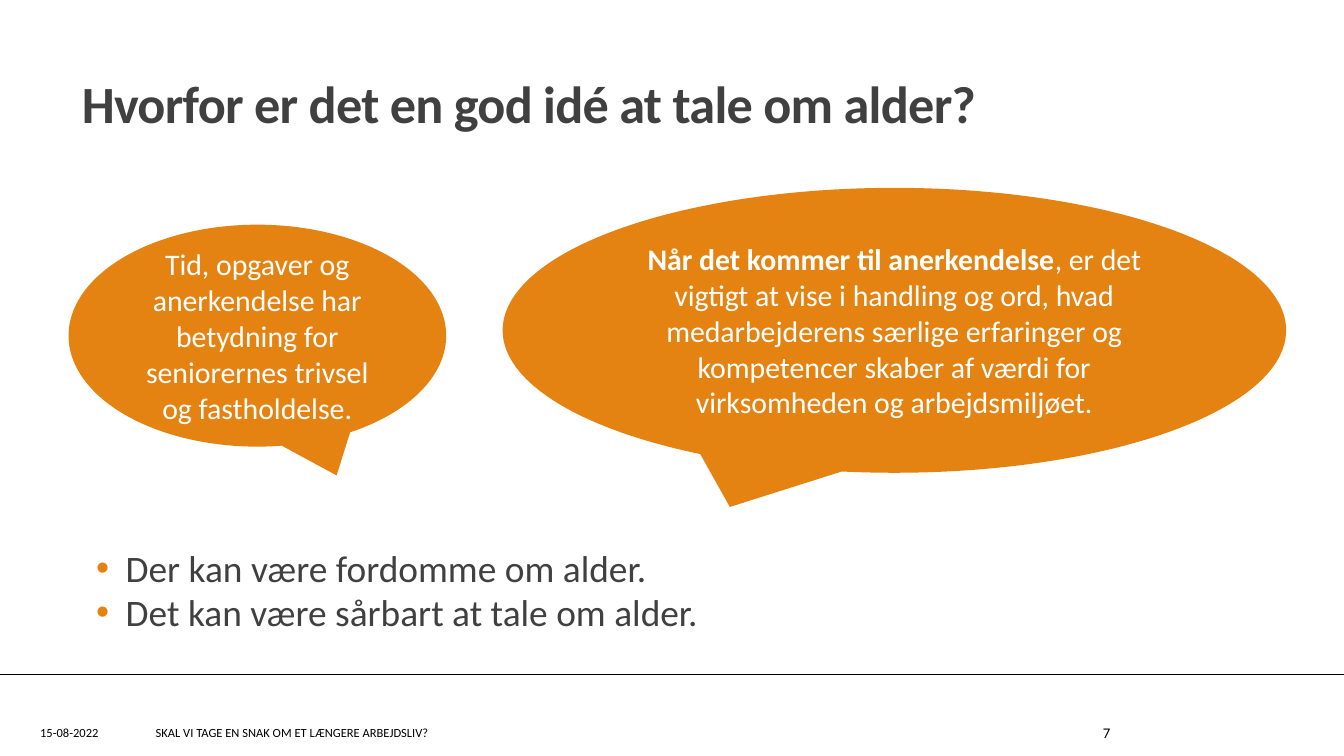
import pptx
import pptx.util
import pptx.dml.color
import pptx.enum.shapes
import pptx.enum.text
import pptx.oxml.ns
from lxml import etree

Pt = pptx.util.Pt
Align = pptx.enum.text.PP_ALIGN
Anchor = pptx.enum.text.MSO_ANCHOR
WIDE = pptx.util.Inches(10)
HIGH = WIDE * 9 // 16
ORANGE, GREY, BLACK, WHITE = "E48312", "404040", "000000", "FFFFFF"


def color(code):
    return pptx.dml.color.RGBColor.from_string(code)


def place(box):
    """Turn percentages of the slide into lengths."""
    return [int(share * side / 100) for share, side in zip(box, (WIDE, HIGH) * 2)]


def apply(item, style):
    for name, value in style.items():
        setattr(item, name, value)


def tag(parent, name, **attrs):
    return etree.SubElement(parent, pptx.oxml.ns.qn(name), attrs)


def write(para, text, size, ink, bold=False):
    run = para.add_run()
    run.text = text
    apply(run.font, {"name": "Calibri", "size": Pt(size), "bold": bold})
    run.font.color.rgb = color(ink)
    return run


def frame(slide, box, anchor=Anchor.TOP):
    text = slide.shapes.add_textbox(*place(box)).text_frame
    apply(text, {"word_wrap": True, "vertical_anchor": anchor})
    return text


def title(slide, box, text):
    para = frame(slide, box).paragraphs[0]
    para.line_spacing = 0.85
    run = write(para, text, 28, GREY, True)
    run.font._element.set("spc", "-37")


def bubble(slide, box, tip, parts):
    kind = pptx.enum.shapes.MSO_SHAPE.OVAL_CALLOUT
    shape = slide.shapes.add_shape(kind, *place(box))
    shape.shadow.inherit = False
    shape.fill.solid()
    shape.fill.fore_color.rgb = color(ORANGE)
    shape.line.fill.background()
    shape.adjustments[0], shape.adjustments[1] = tip
    apply(shape.text_frame, {"word_wrap": True, "vertical_anchor": Anchor.MIDDLE})
    para = shape.text_frame.paragraphs[0]
    para.alignment = Align.CENTER
    for text, bold in parts:
        write(para, text, 16, WHITE, bold)


def points(slide, box, lines):
    text = frame(slide, box)
    apply(text, {"margin_left": 0, "margin_right": 0})
    for row, line in enumerate(lines):
        para = text.add_paragraph() if row else text.paragraphs[0]
        apply(para, {"line_spacing": 0.8, "space_after": Pt(3),
                     "space_before": Pt(1.5 if row else 0)})
        props = para._p.get_or_add_pPr()
        props.set("marL", str(pptx.util.Inches(0.39)))
        props.set("indent", str(pptx.util.Inches(-0.22)))
        tag(tag(props, "a:buClr"), "a:srgbClr", val=ORANGE)
        tag(props, "a:buFont", typeface="Arial")
        tag(props, "a:buChar", char="•")
        write(para, line, 20, GREY)


def footer(slide, top, cells):
    # Rule across the slide
    x, y, wide, _ = place((0, top, 100, 0))
    kind = pptx.enum.shapes.MSO_CONNECTOR.STRAIGHT
    rule = slide.shapes.add_connector(kind, x, y, wide, y)
    rule.line.width = Pt(0.25)
    rule.line.color.rgb = color(BLACK)
    tag(rule._element.spPr, "a:effectLst")
    # Date, topic and page number
    for left, width, text, size, align in cells:
        box = (left, top + 5, width, 5.33)
        para = frame(slide, box, Anchor.MIDDLE).paragraphs[0]
        para.alignment = align
        write(para, text, size, BLACK)


def main():
    deck = pptx.Presentation()
    apply(deck, {"slide_width": WIDE, "slide_height": HIGH})
    slide = deck.slides.add_slide(deck.slide_layouts[6])

    title(slide, (5.1, 9.78, 82.5, 17.78), "Hvorfor er det en god idé at tale om alder?")
    points(slide, (5.45, 72.4, 81.2, 13.33),
           ["Der kan være fordomme om alder.",
            "Det kan være sårbart at tale om alder."])
    bubble(slide, (37.4, 24.85, 58.3, 37.69), (-0.21, 0.62),
           [("Når det kommer til anerkendelse", True),
            (", er det vigtigt at vise i handling og ord, hvad medarbejderens "
             "særlige erfaringer og kompetencer skaber af værdi for "
             "virksomheden og arbejdsmiljøet.", False)])
    bubble(slide, (5.1, 29.72, 28.1, 29.36), (0.21, 0.63),
           [("Tid, opgaver og anerkendelse har betydning for seniorernes "
             "trivsel og fastholdelse.", False)])
    footer(slide, 89.24,
           [(2, 7.9, "15-08-2022", 6.7, Align.LEFT),
            (10.6, 29.9, "SKAL VI TAGE EN SNAK OM ET LÆNGERE ARBEJDSLIV?", 6.7, Align.LEFT),
            (72.8, 10.8, "7", 7.9, Align.RIGHT)])
    deck.save("out.pptx")


if __name__ == "__main__":
    main()
